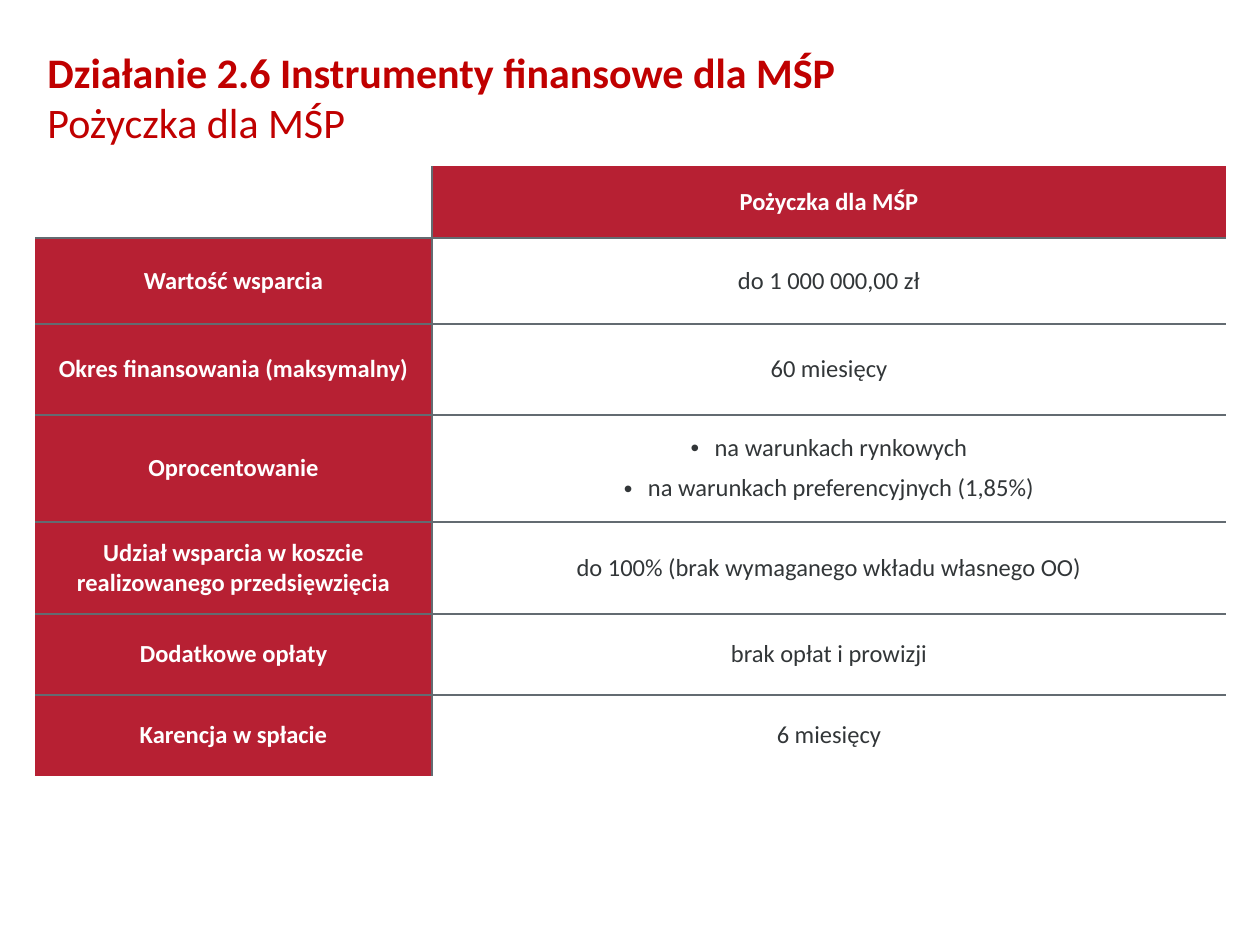
from dataclasses import dataclass
from lxml.etree import SubElement
from pptx import Presentation
from pptx.dml.color import RGBColor
from pptx.enum.text import MSO_ANCHOR, PP_ALIGN
from pptx.oxml.ns import qn
from pptx.util import Pt

SCALE = 914400 / 126


@dataclass(frozen=True)
class Theme:
    font: str = "Calibri"
    title: str = "C00000"
    red: str = "B72033"
    white: str = "FFFFFF"
    dark: str = "323638"
    line: str = "636B71"
    head: int = 24
    body: int = 14


THEME = Theme()
PLAIN = "{2D5ABB26-0587-4C30-8999-92F81FD0307C}"
COLS = [397, 794]
HEIGHTS = [72, 86, 91, 107, 92, 81, 81]
ROWS = [
    ("", ["Pożyczka dla MŚP"]),
    ("Wartość wsparcia", ["do 1 000 000,00 zł"]),
    ("Okres finansowania (maksymalny)", ["60 miesięcy"]),
    ("Oprocentowanie", ["na warunkach rynkowych",
                        "na warunkach preferencyjnych (1,85%)"]),
    ("Udział wsparcia w koszcie realizowanego przedsięwzięcia",
     ["do 100% (brak wymaganego wkładu własnego OO)"]),
    ("Dodatkowe opłaty", ["brak opłat i prowizji"]),
    ("Karencja w spłacie", ["6 miesięcy"]),
]


def px(n):
    return round(n * SCALE)


def write(para, text, *, size, color, bold=False, align=PP_ALIGN.LEFT,
          before=0, bullet=False):
    if bullet:
        props = para._p.get_or_add_pPr()
        props.set("marL", str(px(24)))
        props.set("indent", str(px(-24)))
        SubElement(props, qn("a:buFont"), typeface="Arial")
        SubElement(props, qn("a:buChar"), char="•")
    para.alignment = align
    if before:
        para.space_before = Pt(before)
    run = para.add_run()
    run.text = text
    font = run.font
    font.name, font.size, font.bold = THEME.font, Pt(size), bold
    font.color.rgb = RGBColor.from_string(color)


def fill_text(frame, lines, **style):
    for i, line in enumerate(lines):
        para = frame.add_paragraph() if i else frame.paragraphs[0]
        write(para, line, before=6 if i else 0, **style)


def add_title(slide):
    box = slide.shapes.add_textbox(px(35), px(38), px(1014), px(107))
    frame = box.text_frame
    frame.word_wrap = True
    frame.margin_top = px(8)
    style = {"size": THEME.head, "color": THEME.title}
    write(frame.paragraphs[0], "Działanie 2.6 Instrumenty finansowe dla MŚP",
          bold=True, **style)
    write(frame.add_paragraph(), "Pożyczka dla MŚP", **style)


def add_edges(cell, sides):
    props = cell._tc.get_or_add_tcPr()
    for side in "LRTB":
        if side in sides:
            edge = SubElement(props, qn(f"a:ln{side}"), w=str(Pt(1)))
            paint = SubElement(edge, qn("a:solidFill"))
            SubElement(paint, qn("a:srgbClr"), val=THEME.line)


def fill_cell(cell, lines, red, sides):
    add_edges(cell, sides)
    cell.vertical_anchor = MSO_ANCHOR.MIDDLE
    cell.margin_left = cell.margin_right = px(12)
    cell.margin_top = cell.margin_bottom = px(5)
    if not any(lines):
        cell.fill.background()
        return
    cell.fill.solid()
    cell.fill.fore_color.rgb = RGBColor.from_string(
        THEME.red if red else THEME.white)
    fill_text(cell.text_frame, lines, size=THEME.body, bold=red,
              color=THEME.white if red else THEME.dark,
              align=PP_ALIGN.CENTER, bullet=len(lines) > 1)


def add_terms(slide):
    frame = slide.shapes.add_table(len(ROWS), len(COLS), px(35), px(166),
                                   px(sum(COLS)), px(sum(HEIGHTS)))
    table = frame.table
    table.first_row = table.horz_banding = False
    table._tbl.tblPr.find(qn("a:tableStyleId")).text = PLAIN
    for col, width in zip(table.columns, COLS):
        col.width = px(width)
    for i, (label, terms) in enumerate(ROWS):
        table.rows[i].height = px(HEIGHTS[i])
        sides = ("T" if i else "") + ("B" if i < len(ROWS) - 1 else "")
        fill_cell(table.cell(i, 0), [label], True, "R" + sides)
        fill_cell(table.cell(i, 1), terms, i == 0, "L" + sides)


def main():
    deck = Presentation()
    deck.slide_width, deck.slide_height = px(1260), px(945)
    slide = deck.slides.add_slide(deck.slide_layouts[6])
    add_title(slide)
    add_terms(slide)
    deck.save("out.pptx")


if __name__ == "__main__":
    main()
